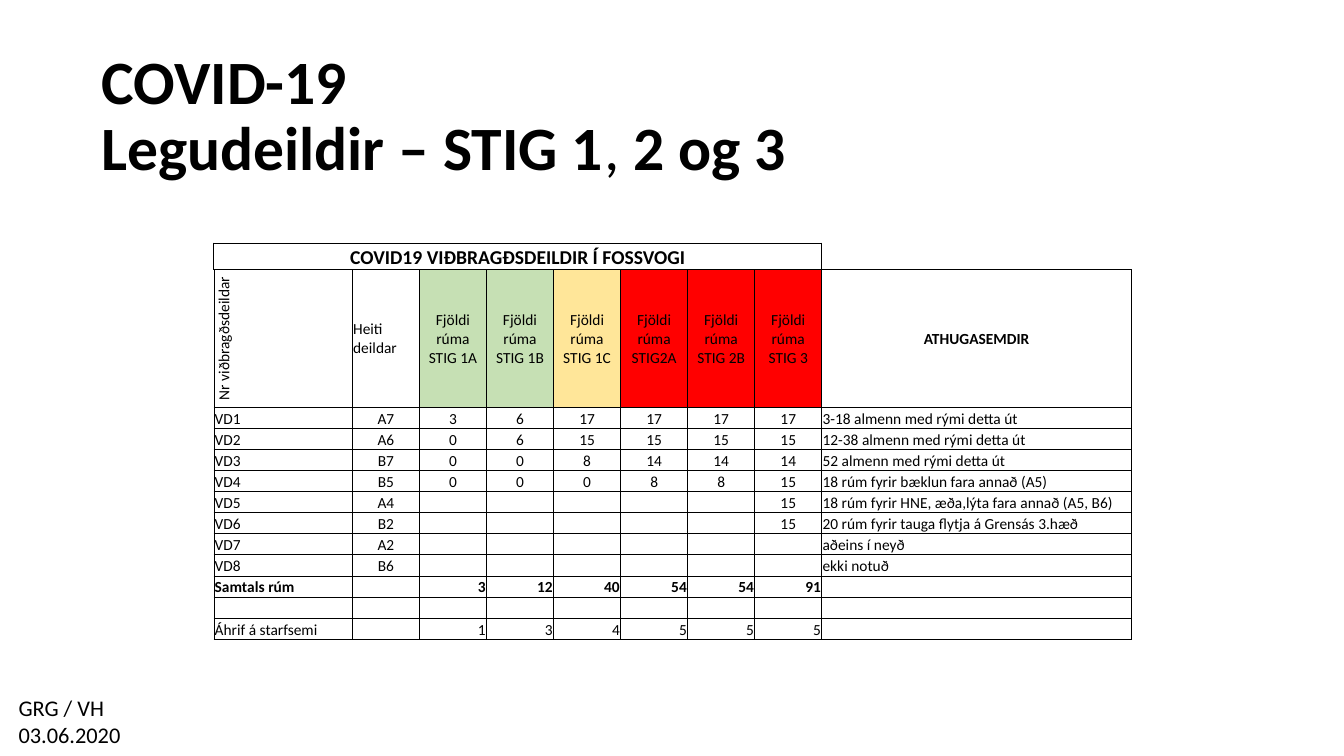
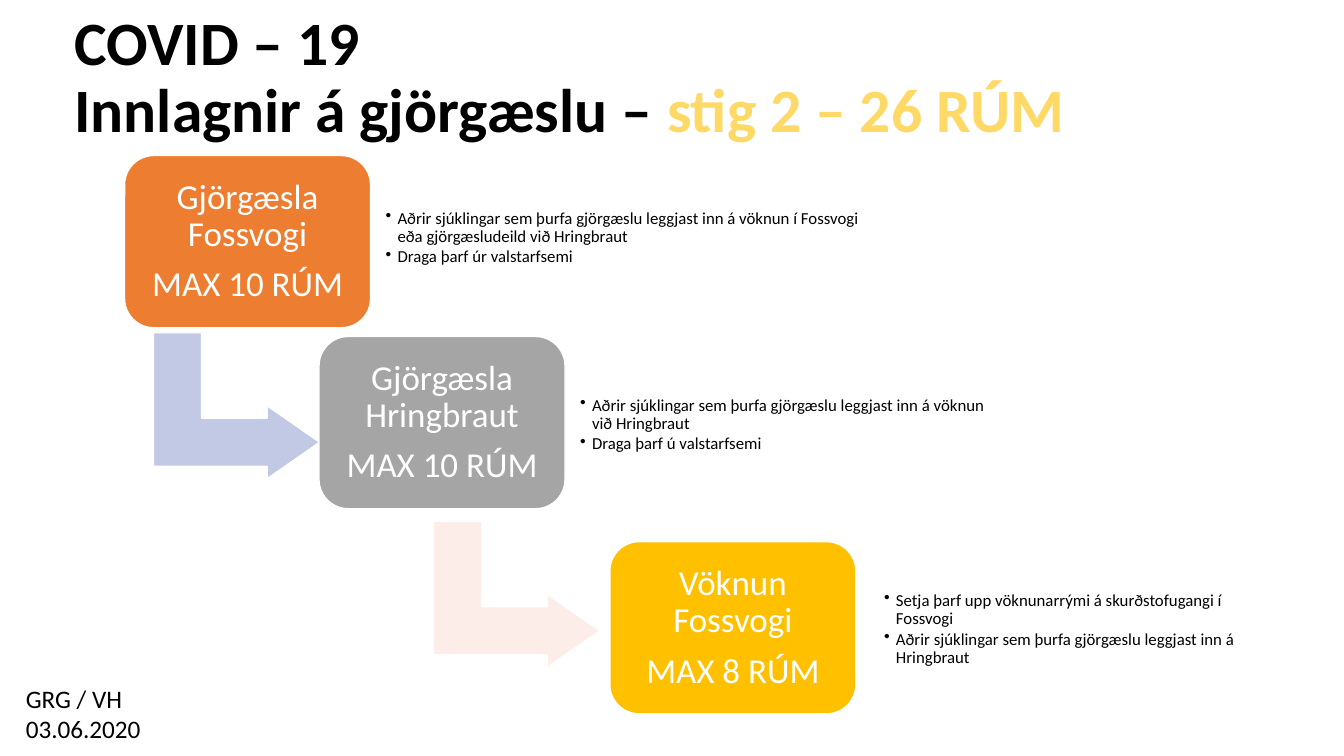
from dataclasses import dataclass

from lxml import etree
from pptx import Presentation
from pptx.dml.color import RGBColor
from pptx.enum import shapes, text
from pptx.oxml import ns
from pptx.util import Cm, Pt

FONT = "Calibri"
BLACK = RGBColor(0x00, 0x00, 0x00)
WHITE = RGBColor(0xFF, 0xFF, 0xFF)
GOLD = RGBColor(0xFF, 0xD9, 0x66)
GREEN = RGBColor(0xC6, 0xE0, 0xB4)
YELLOW = RGBColor(0xFF, 0xE6, 0x99)
RED = RGBColor(0xFF, 0x00, 0x00)
ORANGE = RGBColor(0xED, 0x7D, 0x31)
GREY = RGBColor(0xA5, 0xA5, 0xA5)
AMBER = RGBColor(0xFF, 0xC0, 0x00)
PALE_BLUE = RGBColor(0xC1, 0xC9, 0xE4)
PALE_PINK = RGBColor(0xFC, 0xED, 0xE8)

LEFT, CENTER, RIGHT = (text.PP_ALIGN.LEFT, text.PP_ALIGN.CENTER,
                       text.PP_ALIGN.RIGHT)
MIDDLE, BOTTOM = text.MSO_ANCHOR.MIDDLE, text.MSO_ANCHOR.BOTTOM

CARD_W, CARD_H = 6.2, 4.34
ARROW_W, ARROW_H = 3.68, 4.19
NOTE_H = 3.5

COLUMNS = [3.49] + [1.69] * 7 + [7.81]
ROWS = [0.66, 3.48] + [0.53] * 10 + [0.55]
TABLE_TITLE = "COVID19 VIÐBRAGÐSDEILDIR Í FOSSVOGI"
HEADERS = [
    ("Nr viðbragðsdeildar", None),
    ("Heiti deildar", None),
    ("Fjöldi rúma\nSTIG 1A", GREEN),
    ("Fjöldi rúma\nSTIG 1B", GREEN),
    ("Fjöldi rúma\nSTIG 1C", YELLOW),
    ("Fjöldi rúma STIG2A", RED),
    ("Fjöldi rúma\nSTIG 2B", RED),
    ("Fjöldi rúma\nSTIG 3", RED),
    ("ATHUGASEMDIR", None),
]
WARDS = [
    ["VD1", "A7", 3, 6, 17, 17, 17, 17, "3-18 almenn med rými detta út"],
    ["VD2", "A6", 0, 6, 15, 15, 15, 15, "12-38 almenn med rými detta út"],
    ["VD3", "B7", 0, 0, 8, 14, 14, 14, "52 almenn med rými detta út"],
    ["VD4", "B5", 0, 0, 0, 8, 8, 15, "18 rúm fyrir bæklun fara annað (A5)"],
    ["VD5", "A4", "", "", "", "", "", 15,
     "18 rúm fyrir HNE, æða,lýta fara annað (A5, B6)"],
    ["VD6", "B2", "", "", "", "", "", 15,
     "20 rúm fyrir tauga flytja á Grensás 3.hæð"],
    ["VD7", "A2", "", "", "", "", "", "", "aðeins í neyð"],
    ["VD8", "B6", "", "", "", "", "", "", "ekki notuð"],
]
SUMMARY = [
    ["Samtals rúm", "", 3, 12, 40, 54, 54, 91, ""],
    [""] * 9,
    ["Áhrif á starfsemi", "", 1, 3, 4, 5, 5, 5, ""],
]


@dataclass
class Step:
    """A card; note and arrow offsets are measured from its corner, in cm."""
    at: tuple
    fill: RGBColor
    lines: list
    notes: list
    note_at: tuple
    note_w: float
    arrow_at: tuple = None
    arrow_fill: RGBColor = None


STEPS = [
    Step((3.14, 3.92), ORANGE, ["Gjörgæsla Fossvogi", "MAX 10 RÚM"],
         ["Aðrir sjúklingar sem þurfa gjörgæslu leggjast inn á vöknun í "
          "Fossvogi eða gjörgæsludeild við Hringbraut",
          "Draga þarf úr valstarfsemi"],
         (6.45, 0.33), 12.55, (0.98, 4.21), PALE_BLUE),
    Step((8.04, 8.48), GREY, ["Gjörgæsla Hringbraut", "MAX 10 RÚM"],
         ["Aðrir sjúklingar sem þurfa gjörgæslu leggjast inn á vöknun við "
          "Hringbraut",
          "Draga þarf ú valstarfsemi"],
         (6.45, 0.48), 10.59, (3.14, 4.4), PALE_PINK),
    Step((15.37, 13.65), AMBER, ["Vöknun Fossvogi", "MAX 8 RÚM"],
         ["Setja þarf upp vöknunarrými á skurðstofugangi í Fossvogi",
          "Aðrir sjúklingar sem þurfa gjörgæslu leggjast inn á Hringbraut"],
         (6.78, 0.46), 10.0),
]


def write(tf, paragraphs, size, color=BLACK, bold=False, align=LEFT,
          line=None, gap=0, bullet=False):
    """Fill a text frame; a paragraph is a string or a list of
    (text, color, bold) runs, where a newline is a line break."""
    for i, runs in enumerate(paragraphs):
        p = tf.paragraphs[0] if i == 0 else tf.add_paragraph()
        p.alignment = align
        if line:
            p.line_spacing = line
        if gap and i:
            p.space_before = Pt(gap)
        if bullet:
            pPr = p._p.get_or_add_pPr()
            pPr.set("marL", str(Cm(0.3)))
            pPr.set("indent", str(-Cm(0.3)))
            etree.SubElement(pPr, ns.qn("a:buChar")).set("char", "•")
        if isinstance(runs, str):
            runs = [(runs, color, bold)]
        for words, run_color, run_bold in runs:
            for j, part in enumerate(words.split("\n")):
                if j:
                    p.add_line_break()
                if part:
                    r = p.add_run()
                    r.text = part
                    r.font.name, r.font.size = FONT, Pt(size)
                    r.font.bold = run_bold
                    r.font.color.rgb = run_color
        if not p.runs:
            p._p.get_or_add_endParaRPr().set("sz", str(size * 100))


def set_margins(frame, left, top, right, bottom):
    frame.margin_left, frame.margin_top = Cm(left), Cm(top)
    frame.margin_right, frame.margin_bottom = Cm(right), Cm(bottom)


def add_text(s, box, paragraphs, size, anchor=text.MSO_ANCHOR.TOP,
             margin=None, **fmt):
    tf = s.shapes.add_textbox(*map(Cm, box)).text_frame
    tf.word_wrap = True
    tf.vertical_anchor = anchor
    if margin is not None:
        set_margins(tf, *[margin] * 4)
    write(tf, paragraphs, size, **fmt)


def add_title(s, x, y, runs):
    add_text(s, (x, y, 29.21, 3.68), [runs], 44, MIDDLE, line=0.9)


def add_footer(s, x, y, size):
    add_text(s, (x, y, 6.93, 1.8), ["GRG / VH", "03.06.2020"], size)


def add_filled(s, kind, box, fill, adjustments):
    sp = s.shapes.add_shape(kind, *map(Cm, box))
    sp.shadow.inherit = False
    sp.fill.solid()
    sp.fill.fore_color.rgb = fill
    sp.line.color.rgb = WHITE
    sp.line.width = Pt(1)
    for i, value in enumerate(adjustments):
        sp.adjustments[i] = value
    return sp


def set_borders(cell, widths):
    """Draw black borders; widths maps L, R, T and B to points."""
    tcPr = cell._tc.get_or_add_tcPr()
    for side in "LRTB":
        if side in widths:
            ln = etree.SubElement(tcPr, ns.qn(f"a:ln{side}"),
                                  w=str(Pt(widths[side])))
            fill = etree.SubElement(ln, ns.qn("a:solidFill"))
            etree.SubElement(fill, ns.qn("a:srgbClr"), val=str(BLACK))


def fill_cell(cell, words, widths, fill=None, anchor=BOTTOM, size=11, **fmt):
    set_margins(cell, 0.02, 0.02, 0.02, 0)
    cell.vertical_anchor = anchor
    set_borders(cell, widths)
    if fill is None:
        cell.fill.background()
    else:
        cell.fill.solid()
        cell.fill.fore_color.rgb = fill
    write(cell.text_frame, str(words).split("\n"), size, **fmt)


def add_ward_table(s, x, y):
    table = s.shapes.add_table(len(ROWS), len(COLUMNS), Cm(x), Cm(y),
                               Cm(sum(COLUMNS)), Cm(sum(ROWS))).table
    table.first_row = table.horz_banding = False
    for column, width in zip(table.columns, COLUMNS):
        column.width = Cm(width)
    for row, height in zip(table.rows, ROWS):
        row.height = Cm(height)

    last = len(COLUMNS) - 1
    grid = dict.fromkeys("LRTB", 0.5)
    table.cell(0, 0).merge(table.cell(0, last - 1))
    fill_cell(table.cell(0, 0), TABLE_TITLE, {"L": 1, "R": 1, "T": 1, "B": 0.5},
              size=14, bold=True, align=CENTER)
    for c in range(1, last):
        set_borders(table.cell(0, c), {"T": 1, "B": 0.5})
    fill_cell(table.cell(0, last), "", {"L": 1, "B": 0.5})

    for c, (words, fill) in enumerate(HEADERS):
        fill_cell(table.cell(1, c), words, grid, fill, MIDDLE,
                  bold=c == last, align=LEFT if c == 1 else CENTER)
    table.cell(1, 0)._tc.get_or_add_tcPr().set("vert", "vert270")

    for r, values in enumerate(WARDS + SUMMARY):
        inner = CENTER if r < len(WARDS) else RIGHT
        for c, value in enumerate(values):
            fill_cell(table.cell(r + 2, c), value, grid,
                      bold=values is SUMMARY[0],
                      align=inner if 0 < c < last else LEFT)


def add_step(s, step):
    x, y = step.at
    if step.arrow_at:
        dx, dy = step.arrow_at
        arrow = add_filled(s, shapes.MSO_SHAPE.BENT_UP_ARROW,
                           (x + dx, y + dy, ARROW_W, ARROW_H),
                           step.arrow_fill, (0.33, 0.25, 0.36))
        arrow.rotation = 90
    card = add_filled(s, shapes.MSO_SHAPE.ROUNDED_RECTANGLE,
                      (x, y, CARD_W, CARD_H), step.fill, (0.17,))
    tf = card.text_frame
    tf.word_wrap = True
    tf.vertical_anchor = MIDDLE
    set_margins(tf, *[0.25] * 4)
    write(tf, step.lines, 25, WHITE, align=CENTER, line=0.9, gap=8.75)
    dx, dy = step.note_at
    add_text(s, (x + dx, y + dy, step.note_w, NOTE_H), step.notes, 12,
             MIDDLE, margin=0.13, line=0.9, gap=1.8, bullet=True)


def build_wards_slide(s):
    add_title(s, 2.31, 1.12, [("COVID-19\nLegudeildir – STIG 1", BLACK, True),
                              (", ", BLACK, False),
                              ("2 og 3", BLACK, True)])
    add_ward_table(s, 5.39, 6.13)
    add_footer(s, 0.22, 17.37, 16)


def build_intensive_care_slide(s):
    add_title(s, 1.63, 0.15,
              [("COVID – 19\nInnlagnir á gjörgæslu – ", BLACK, True),
               ("stig 2 – 26 RÚM", GOLD, True)])
    for step in STEPS:
        add_step(s, step)
    add_footer(s, 0.4, 17.1, 18)


def main():
    prs = Presentation()
    prs.slide_width, prs.slide_height = Cm(33.87), Cm(19.05)
    for build in (build_wards_slide, build_intensive_care_slide):
        build(prs.slides.add_slide(prs.slide_layouts[6]))
    prs.save("out.pptx")


if __name__ == "__main__":
    main()
